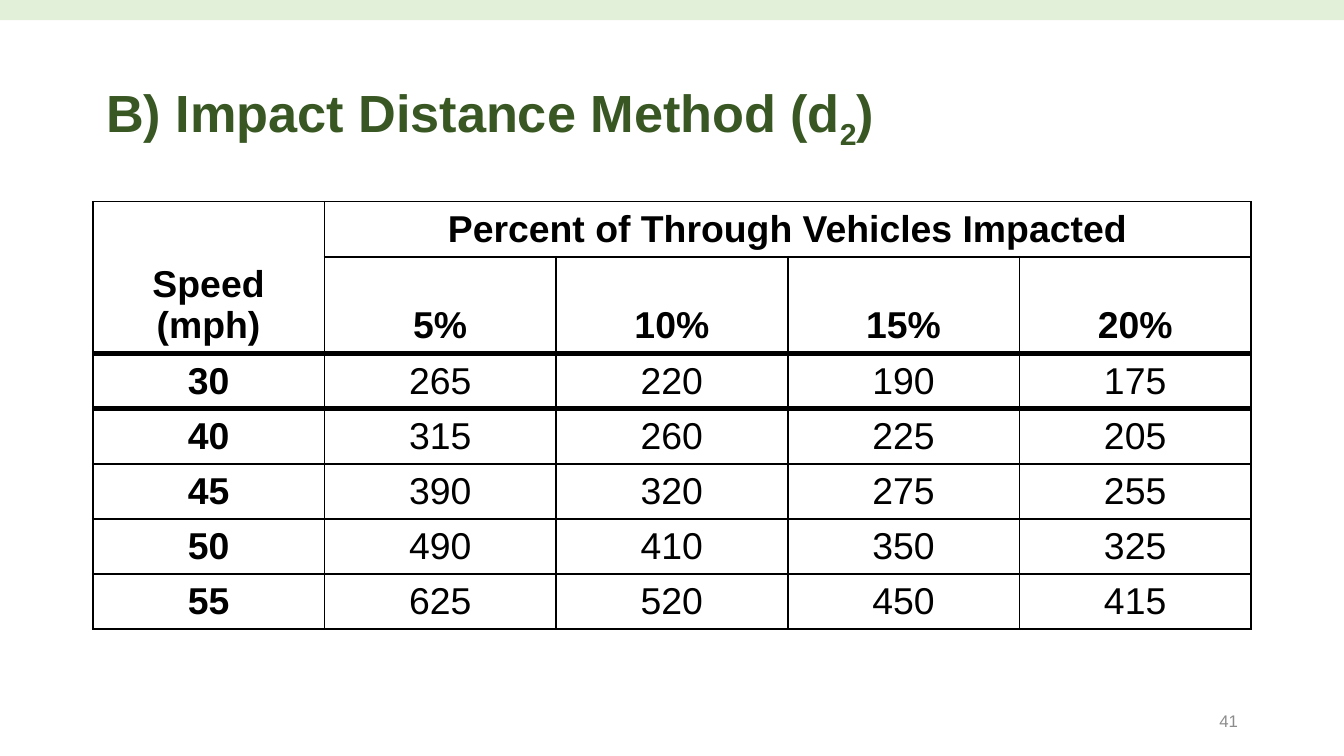
from dataclasses import dataclass

from lxml import etree
from pptx import Presentation
from pptx.dml import color
from pptx.enum import shapes, text
from pptx.oxml import ns
from pptx.util import Inches, Pt

FONT = "Arial"
BLACK = "000000"
GREEN = "385723"
PALE_GREEN = "E2F0D9"
GRAY = "8C8C8C"
THIN, THICK = 1, 3
PAGE_WIDTH = 10
PAGE_HEIGHT = PAGE_WIDTH * 9 / 16
HEADER_ROWS = 2
PERCENTS = ["5%", "10%", "15%", "20%"]


@dataclass(frozen=True)
class SpeedRow:
    speed: int
    distances: tuple[int, ...]


SPEED_ROWS = [
    SpeedRow(30, (265, 220, 190, 175)),
    SpeedRow(40, (315, 260, 225, 205)),
    SpeedRow(45, (390, 320, 275, 255)),
    SpeedRow(50, (490, 410, 350, 325)),
    SpeedRow(55, (625, 520, 450, 415)),
]
THICK_LINES = {HEADER_ROWS, HEADER_ROWS + 1}


def rgb(value: str) -> color.RGBColor:
    return color.RGBColor.from_string(value)


def style_font(para, size: float, hex_color: str, bold: bool = False) -> None:
    font = para.font
    font.name = FONT
    font.size = Pt(size)
    font.bold = bold
    font.color.rgb = rgb(hex_color)


def set_borders(cell, widths: dict[str, int]) -> None:
    properties = cell._tc.get_or_add_tcPr()
    for index, (side, width) in enumerate(widths.items()):
        line = etree.Element(ns.qn(f"a:ln{side}"), w=str(Pt(width)))
        fill = etree.SubElement(line, ns.qn("a:solidFill"))
        etree.SubElement(fill, ns.qn("a:srgbClr"), val=BLACK)
        properties.insert(index, line)


def draw_band(page) -> None:
    band = page.shapes.add_shape(
        shapes.MSO_SHAPE.RECTANGLE, 0, 0, Inches(PAGE_WIDTH), Inches(0.15)
    )
    band.shadow.inherit = False
    band.fill.solid()
    band.fill.fore_color.rgb = rgb(PALE_GREEN)
    band.line.fill.background()


def draw_title(page) -> None:
    title = page.shapes.title
    title.left, title.top = Inches(0.69), Inches(0.3)
    title.width, title.height = Inches(8.62), Inches(1.09)
    frame = title.text_frame
    frame.vertical_anchor = text.MSO_ANCHOR.MIDDLE
    frame.auto_size = text.MSO_AUTO_SIZE.NONE
    para = frame.paragraphs[0]
    para.alignment = text.PP_ALIGN.LEFT
    para.line_spacing = 0.9
    style_font(para, 28, GREEN, bold=True)
    for words, baseline in [
        ("B) Impact Distance Method (d", 0),
        ("2", -25000),
        (")", 0),
    ]:
        span = para.add_run()
        span.text = words
        if baseline:
            span.font._element.set("baseline", str(baseline))


def draw_table(page) -> None:
    contents = [
        ["Speed (mph)", "Percent of Through Vehicles Impacted", "", "", ""],
        ["", *PERCENTS],
        *[[str(value) for value in (row.speed, *row.distances)] for row in SPEED_ROWS],
    ]
    frame = page.shapes.add_table(
        len(contents), len(contents[0]),
        Inches(0.69), Inches(1.5), Inches(8.62), Inches(3.18),
    )
    table = frame.table
    table.first_row = table.horz_banding = False
    for column in table.columns:
        column.width = Inches(8.62 / len(contents[0]))
    for index, row in enumerate(table.rows):
        row.height = Inches(0.72 if index == 1 else 0.41)
    table.cell(0, 0).merge(table.cell(1, 0))
    table.cell(0, 1).merge(table.cell(0, 4))

    for row_index, values in enumerate(contents):
        header = row_index < HEADER_ROWS
        for column_index, value in enumerate(values):
            cell = table.cell(row_index, column_index)
            cell.fill.background()
            cell.vertical_anchor = (
                text.MSO_ANCHOR.BOTTOM if header else text.MSO_ANCHOR.MIDDLE
            )
            cell.text = value
            para = cell.text_frame.paragraphs[0]
            para.alignment = text.PP_ALIGN.CENTER
            style_font(para, 20, BLACK, bold=header or column_index == 0)
            spans_header = cell.is_merge_origin and column_index == 0
            bottom_line = HEADER_ROWS if spans_header else row_index + 1
            set_borders(cell, {
                "L": THIN,
                "R": THIN,
                "T": THICK if row_index in THICK_LINES else THIN,
                "B": THICK if bottom_line in THICK_LINES else THIN,
            })


def draw_page_number(page) -> None:
    box = page.shapes.add_textbox(
        Inches(7.06), Inches(5.21), Inches(2.25), Inches(0.3)
    )
    frame = box.text_frame
    frame.word_wrap = True
    frame.vertical_anchor = text.MSO_ANCHOR.MIDDLE
    para = frame.paragraphs[0]
    para.text = "41"
    para.alignment = text.PP_ALIGN.RIGHT
    style_font(para, 9, GRAY)


def main() -> None:
    deck = Presentation()
    deck.slide_width, deck.slide_height = Inches(PAGE_WIDTH), Inches(PAGE_HEIGHT)
    page = deck.slides.add_slide(deck.slide_layouts.get_by_name("Title Only"))
    draw_band(page)
    draw_title(page)
    draw_table(page)
    draw_page_number(page)
    deck.save("out.pptx")


if __name__ == "__main__":
    main()
